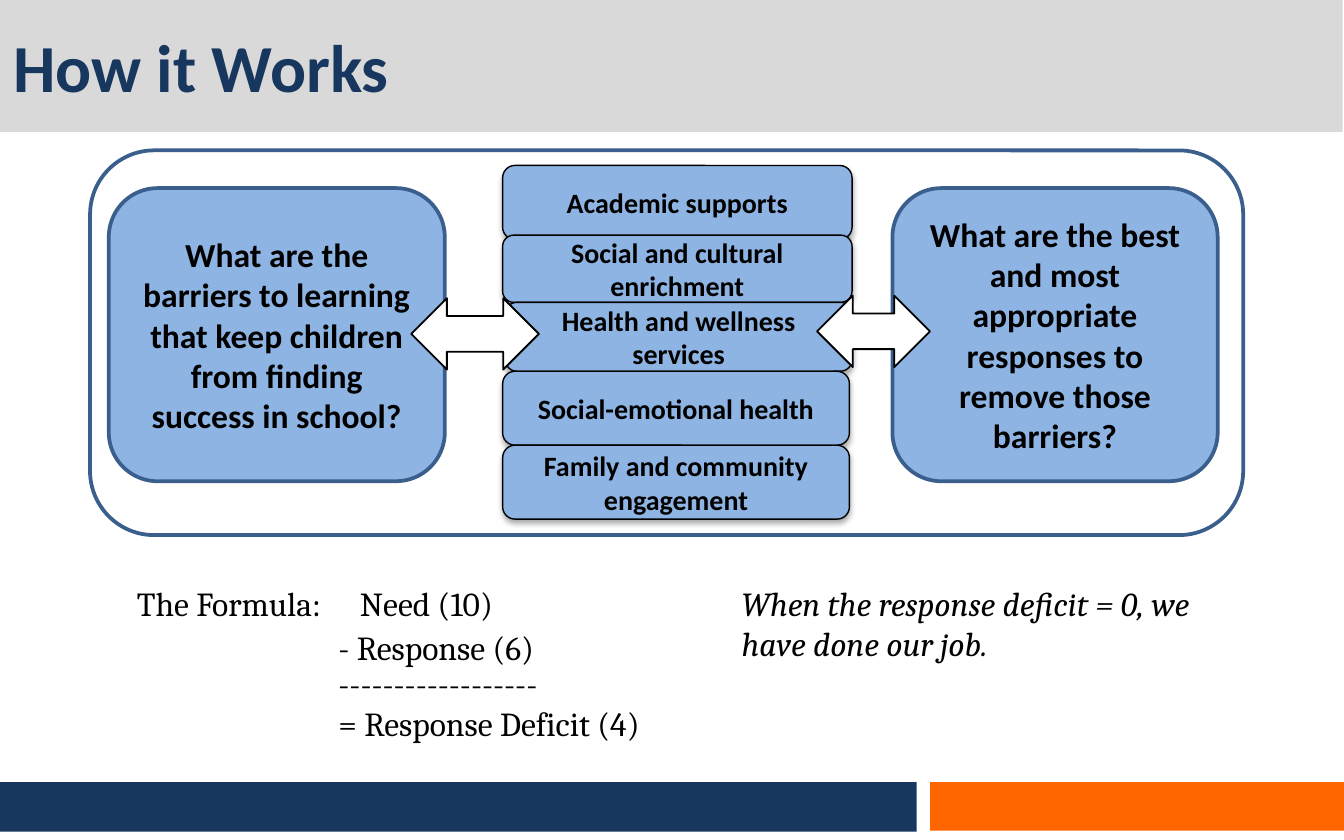
import pptx
import pptx.util
import pptx.dml.color
import pptx.enum.shapes
import pptx.enum.text
import pptx.oxml

WIDTH, HEIGHT = pptx.util.Inches(10), pptx.util.Inches(6.25)
SHAPE = pptx.enum.shapes.MSO_SHAPE
ALIGN = pptx.enum.text.PP_ALIGN
ANCHOR = pptx.enum.text.MSO_ANCHOR
COLORS = {
    "band": "D9D9D9", "navy": "17375E", "orange": "FF6600", "panel": "8EB4E3",
    "edge": "3A5F8C", "black": "000000", "white": "FFFFFF",
}
SHADOW = (
    '<a:effectLst xmlns:a="http://schemas.openxmlformats.org/drawingml/2006/main">'
    '<a:outerShdw blurRad="39370" dist="22860" dir="5400000" rotWithShape="0">'
    '<a:srgbClr val="000000"><a:alpha val="35000"/></a:srgbClr>'
    '</a:outerShdw></a:effectLst>'
)
BANDS = [
    (0, 0, 99.9, 15.7, "band"),
    (0, 93.1, 68.2, 5.9, "navy"),
    (69.2, 93.1, 30.8, 5.8, "orange"),
]
QUESTIONS = [
    (8.1, 25, "What are the barriers to learning that keep children from finding success in school?"),
    (66.4, 24.2, "What are the best and most appropriate responses to remove those barriers?"),
]
SUPPORTS = [
    (37.4, 19.7, 26, 8.8, "Academic supports"),
    (37.4, 28, 26, 8, "Social and cultural enrichment"),
    (37.6, 36, 25.8, 8.2, "Health and wellness services"),
    (37.4, 44.2, 25.8, 8.8, "Social-emotional health"),
    (37.4, 53, 25.8, 8.8, "Family and community engagement"),
]
ARROWS = [(30.6, 35.5, 9.5, 8.5), (60.8, 35.2, 8.4, 8.5)]
NOTES = [
    (9.2, 68.6, 15.8, 11.4, "The Formula:", False),
    (54.2, 68.6, 39.2, 11.4, "When the response deficit = 0, we have done our job.", True),
    (25.8, 68.6, 13.3, 6.4, "Need (10)", False),
    (24.2, 73.9, 18.3, 6.4, "- Response (6)", False),
    (24.2, 78.1, 26.7, 11.4, "------------------\n= Response Deficit (4)", False),
]


def color(name):
    return pptx.dml.color.RGBColor.from_string(COLORS[name])


def place(x, y, w, h):
    return [int(share * side / 100)
            for share, side in zip((x, y, w, h), (WIDTH, HEIGHT, WIDTH, HEIGHT))]


def write(sp, text, size, font="Calibri", ink="black", bold=False, italic=False,
          align=ALIGN.LEFT, anchor=ANCHOR.TOP):
    tf = sp.text_frame
    tf.text = text
    tf.word_wrap = True
    tf.vertical_anchor = anchor
    for p in tf.paragraphs:
        p.alignment = align
        for r in p.runs:
            r.font.name = font
            r.font.size = pptx.util.Pt(size)
            r.font.bold = bold
            r.font.italic = italic
            r.font.color.rgb = color(ink)


def add_block(slide, kind, at, fill=None, line=None, weight=1):
    sp = slide.shapes.add_shape(kind, *place(*at))
    sp.shadow.inherit = False
    if fill:
        sp.fill.solid()
        sp.fill.fore_color.rgb = color(fill)
    else:
        sp.fill.background()
    if line:
        sp.line.color.rgb = color(line)
        sp.line.width = pptx.util.Pt(weight)
    else:
        sp.line.fill.background()
    return sp


def add_label(slide, at, text, size, line, weight):
    sp = add_block(slide, SHAPE.ROUNDED_RECTANGLE, at, "panel", line, weight)
    write(sp, text, size, bold=True, align=ALIGN.CENTER, anchor=ANCHOR.MIDDLE)
    return sp


def add_support(slide, at, text):
    sp = add_label(slide, at, text, 15, "black", 0.75)
    effects = sp.element.spPr.find(pptx.oxml.ns.qn("a:effectLst"))
    effects.getparent().replace(effects, pptx.oxml.parse_xml(SHADOW))


def add_note(slide, at, text, italic):
    sp = slide.shapes.add_textbox(*place(*at))
    write(sp, text, 18, font="Cambria", italic=italic)


def add_title(slide, text):
    sp = slide.shapes.title
    sp.left, sp.top, sp.width, sp.height = place(0, 0, 79.2, 15.7)
    write(sp, text, 36, ink="navy", bold=True, anchor=ANCHOR.MIDDLE)
    return sp


def main():
    prs = pptx.Presentation()
    prs.slide_width, prs.slide_height = WIDTH, HEIGHT
    slide = prs.slides.add_slide(prs.slide_layouts[5])

    bands = [add_block(slide, SHAPE.RECTANGLE, at, fill) for *at, fill in BANDS]
    title = add_title(slide, "How it Works")
    bands[-1].element.addnext(title.element)

    add_block(slide, SHAPE.ROUNDED_RECTANGLE, (6.7, 17.9, 85.8, 45.8), line="edge", weight=2)
    for x, w, text in QUESTIONS:
        add_label(slide, (x, 22.4, w, 34.9), text, 18, "edge", 2)
    for *at, text in SUPPORTS:
        add_support(slide, at, text)
    for at in ARROWS:
        add_block(slide, SHAPE.LEFT_RIGHT_ARROW, at, "white", "black")
    for *at, text, italic in NOTES:
        add_note(slide, at, text, italic)

    prs.save("out.pptx")


if __name__ == "__main__":
    main()
